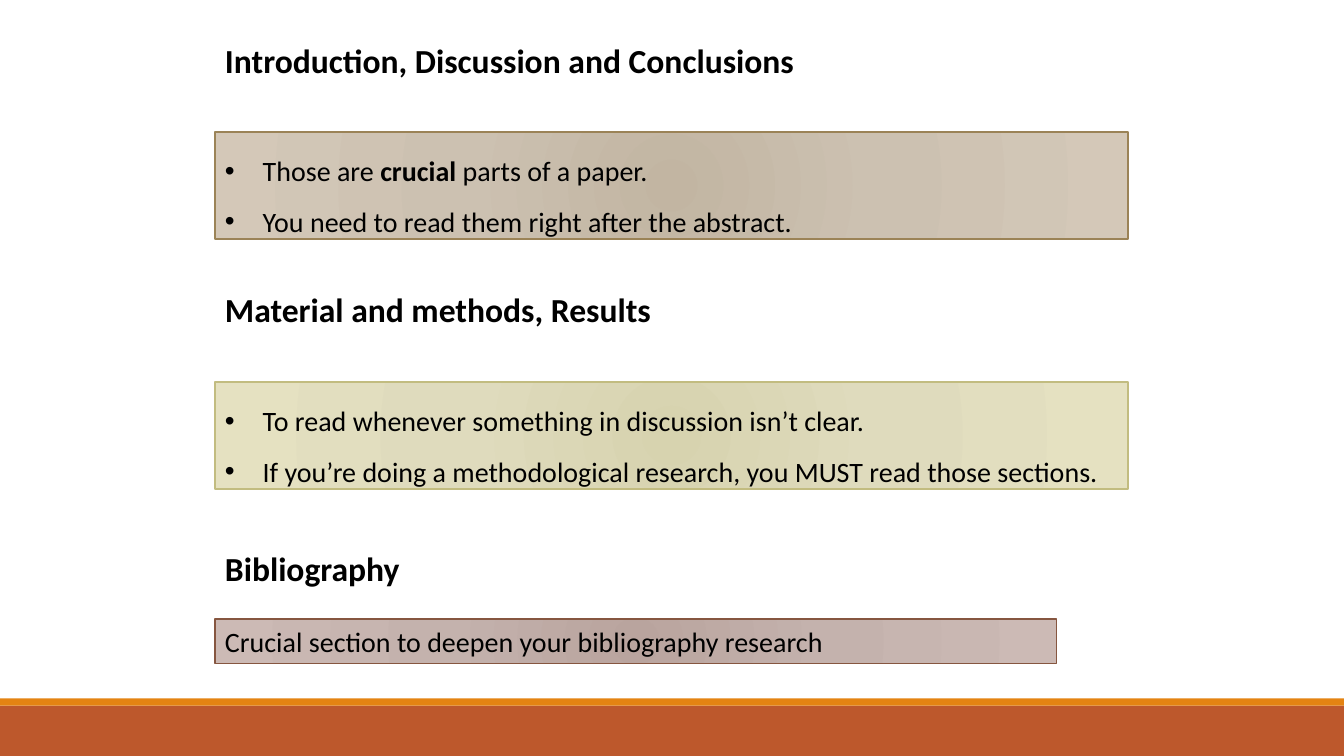
from pptx import Presentation
from pptx.dml.color import RGBColor
from pptx.enum.shapes import MSO_SHAPE as Shape
from pptx.enum.text import MSO_ANCHOR as Anchor, MSO_AUTO_SIZE as AutoSize, PP_ALIGN as Align
from pptx.oxml import parse_xml
from pptx.oxml.ns import nsdecls
from pptx.util import Cm, Pt

WIDTH, HEIGHT = 33.87, 19.05
LEFT = 5.42
HEADING_HEIGHT = 1.3

SECTIONS = [
    dict(heading="Introduction, Discussion and Conclusions", top=0.89, gap=2.44,
         width=23.01, height=2.69, line="9B8357",
         stops=("C2B5A2", "CCC1B1", "D4C8B8"), bulleted=True,
         points=[[("Those are ", False), ("crucial", True), (" parts of a paper.", False)],
                 [("You need to read them right after the abstract.", False)]]),
    dict(heading="Material and methods, Results", top=7.16, gap=2.47,
         width=23.01, height=2.69, line="C2BC80",
         stops=("D7D3AF", "DFDBBD", "E5E1C1"), bulleted=True,
         points=[[("To read whenever something in discussion isn’t clear.", False)],
                 [("If you’re doing a methodological research, "
                   "you MUST read those sections.", False)]]),
    dict(heading="Bibliography", top=13.67, gap=1.93,
         width=21.21, height=1.12, line="865640",
         stops=("B9A49E", "C4B2AD", "CCBAB5"), bulleted=False,
         points=[[("Crucial section to deepen your bibliography research", False)]]),
]


def color(hex_string):
    """Turn a hex string into a colour."""
    return RGBColor.from_string(hex_string)


def add_run(paragraph, text, size, bold):
    """Add one run of black text."""
    run = paragraph.add_run()
    run.text = text
    run.font.name = "Calibri"
    run.font.size = Pt(size)
    run.font.bold = bold
    run.font.color.rgb = color("000000")


def add_rectangle(slide, left, top, width, height):
    """Add a rectangle without a shadow."""
    rectangle = slide.shapes.add_shape(
        Shape.RECTANGLE, Cm(left), Cm(top), Cm(width), Cm(height))
    rectangle.shadow.inherit = False
    return rectangle


def fill_radial(panel, stops):
    """Give the panel a circular gradient."""
    marks = "".join(
        f'<a:gs pos="{place * 1000}"><a:srgbClr val="{stop}"/></a:gs>'
        for place, stop in zip((0, 45, 100), stops))
    gradient = parse_xml(
        f'<a:gradFill {nsdecls("a")} rotWithShape="1"><a:gsLst>{marks}</a:gsLst>'
        '<a:path path="circle"><a:fillToRect l="100000" t="100000" r="100000" b="100000"/>'
        '</a:path></a:gradFill>')
    panel.element.spPr.insert(2, gradient)


def add_bullet(paragraph):
    """Give the paragraph a bullet with a hanging indent."""
    properties = paragraph._p.get_or_add_pPr()
    properties.set("marL", str(Cm(0.95)))
    properties.set("indent", str(-Cm(0.95)))
    properties.append(parse_xml(f'<a:buFont {nsdecls("a")} typeface="Arial"/>'))
    properties.append(parse_xml(f'<a:buChar {nsdecls("a")} char="•"/>'))


def add_heading(slide, text, left, top, width):
    """Place a bold section heading."""
    box = slide.shapes.add_textbox(Cm(left), Cm(top), Cm(width), Cm(HEADING_HEIGHT))
    box.text_frame.word_wrap = True
    box.text_frame.auto_size = AutoSize.SHAPE_TO_FIT_TEXT
    add_run(box.text_frame.paragraphs[0], text, 24, True)


def add_panel(slide, section, left, top):
    """Place a gradient panel with its points."""
    panel = add_rectangle(slide, left, top, section["width"], section["height"])
    fill_radial(panel, section["stops"])
    panel.line.color.rgb = color(section["line"])
    panel.line.width = Pt(1)
    frame = panel.text_frame
    frame.word_wrap = True
    frame.auto_size = AutoSize.SHAPE_TO_FIT_TEXT
    frame.vertical_anchor = Anchor.TOP
    for index, point in enumerate(section["points"]):
        paragraph = frame.add_paragraph() if index else frame.paragraphs[0]
        paragraph.alignment = Align.LEFT
        if section["bulleted"]:
            paragraph.line_spacing = 1.5
            add_bullet(paragraph)
        for text, bold in point:
            add_run(paragraph, text, 20, bold)


def add_section(slide, section, left):
    """Place a heading and the panel below it."""
    add_heading(slide, section["heading"], left, section["top"], section["width"])
    add_panel(slide, section, left, section["top"] + section["gap"])


def add_footer(slide, bottom, width):
    """Place the two colour bands that end at the bottom edge."""
    for rise, height, fill in ((1.27, 1.27, "BD582C"), (1.45, 0.18, "E48312")):
        band = add_rectangle(slide, 0, bottom - rise, width, height)
        band.fill.solid()
        band.fill.fore_color.rgb = color(fill)
        band.line.fill.background()


def main():
    """Build and save the slide."""
    deck = Presentation()
    deck.slide_width, deck.slide_height = Cm(WIDTH), Cm(HEIGHT)
    slide = deck.slides.add_slide(deck.slide_layouts[6])
    add_footer(slide, HEIGHT, WIDTH)
    for section in SECTIONS:
        add_section(slide, section, LEFT)
    deck.save("out.pptx")


if __name__ == "__main__":
    main()
